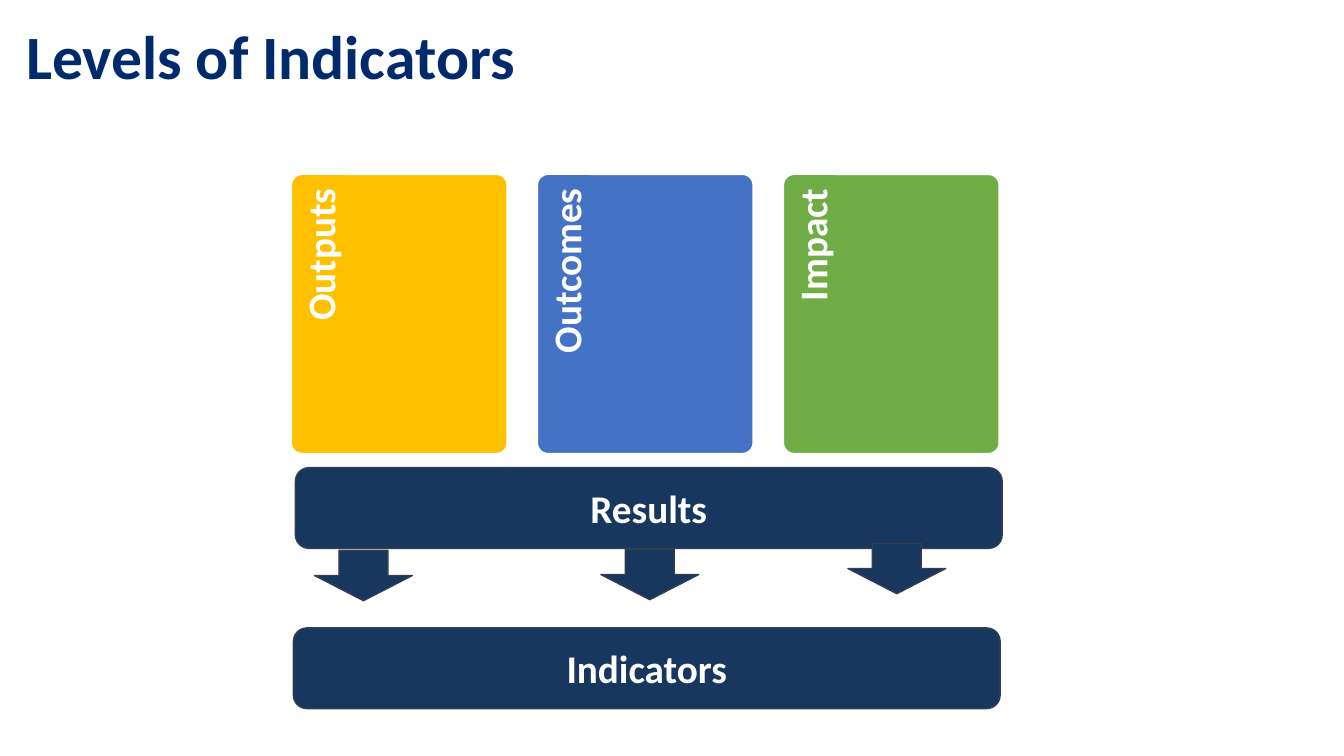
from dataclasses import dataclass

from pptx import Presentation
from pptx.dml.color import RGBColor
from pptx.enum.shapes import MSO_SHAPE
from pptx.enum.text import MSO_ANCHOR, PP_ALIGN
from pptx.util import Pt

ROUNDED = MSO_SHAPE.ROUNDED_RECTANGLE
DOWN_ARROW = MSO_SHAPE.DOWN_ARROW
TOP = MSO_ANCHOR.TOP
MIDDLE = MSO_ANCHOR.MIDDLE
LEFT = PP_ALIGN.LEFT
CENTER = PP_ALIGN.CENTER
RIGHT = PP_ALIGN.RIGHT

EMU_PER_PX = 9144
SLIDE_WIDTH, SLIDE_HEIGHT = 1333, 750


@dataclass(frozen=True)
class Theme:
    font: str = "Calibri"
    title_size: int = 44
    label_size: int = 28
    title: str = "002A6C"
    white: str = "FFFFFF"
    bar: str = "17375E"
    bar_line: str = "333F50"
    outputs: str = "FFC000"
    outcomes: str = "4472C4"
    impact: str = "70AD47"


THEME = Theme()


def px(length):
    return length * EMU_PER_PX


def color(value):
    return RGBColor.from_string(value)


def add_box(slide, kind, box, fill, line):
    shape = slide.shapes.add_shape(kind, *map(px, box))
    shape.shadow.inherit = False
    shape.fill.solid()
    shape.fill.fore_color.rgb = color(fill)
    shape.line.color.rgb = color(line)
    shape.line.width = Pt(1)
    return shape


def write(shape, text, size, text_color, alignment, anchor, spacing=1.0):
    frame = shape.text_frame
    frame.word_wrap = True
    frame.vertical_anchor = anchor
    frame.text = text
    paragraph = frame.paragraphs[0]
    paragraph.alignment = alignment
    paragraph.line_spacing = spacing
    font = paragraph.runs[0].font
    font.name = THEME.font
    font.size = Pt(size)
    font.bold = True
    font.color.rgb = color(text_color)


def add_title(slide, box, text):
    title = slide.shapes.add_textbox(*map(px, box))
    write(title, text, THEME.title_size, THEME.title, LEFT, MIDDLE, 0.9)


def add_level_card(slide, box, text, fill):
    left, top, width, height = box
    card = add_box(slide, ROUNDED, box, fill, THEME.white)
    card.adjustments[0] = 0.05
    label_box = (left - 92, top + 92, 227, 43)
    label = slide.shapes.add_textbox(*map(px, label_box))
    label.rotation = 270
    write(label, text, THEME.label_size, THEME.white, RIGHT, TOP, 0.9)
    frame = label.text_frame
    frame.margin_left = frame.margin_bottom = 0
    frame.margin_top = px(10)
    frame.margin_right = px(14)


def add_levels(slide, box):
    left, top, width, height = box
    levels = (
        ("Outputs", THEME.outputs),
        ("Outcomes", THEME.outcomes),
        ("Impact", THEME.impact),
    )
    card_width = 214
    step = (width - card_width) // (len(levels) - 1)
    for index, (text, fill) in enumerate(levels):
        card_box = (left + index * step, top, card_width, height)
        add_level_card(slide, card_box, text, fill)


def add_bar(slide, box, text):
    bar = add_box(slide, ROUNDED, box, THEME.bar, THEME.bar_line)
    write(bar, text, THEME.label_size, THEME.white, CENTER, MIDDLE)


def add_results_flow(slide, box):
    left, top, width, height = box
    bar_height = 80
    add_bar(slide, (left + 2, top, width, bar_height), "Results")
    add_bar(slide, (left, top + height - bar_height, width, bar_height), "Indicators")
    for arrow_left, arrow_top in ((21, 82), (305, 81), (550, 75)):
        arrow_box = (left + arrow_left, top + arrow_top, 97, 50)
        add_box(slide, DOWN_ARROW, arrow_box, THEME.bar, THEME.bar_line)


def main():
    presentation = Presentation()
    presentation.slide_width = px(SLIDE_WIDTH)
    presentation.slide_height = px(SLIDE_HEIGHT)
    slide = presentation.slides.add_slide(presentation.slide_layouts[6])
    add_title(slide, (16, 0, 1299, 118), "Levels of Indicators")
    add_levels(slide, (289, 173, 702, 277))
    add_results_flow(slide, (291, 464, 701, 239))
    presentation.save("out.pptx")


if __name__ == "__main__":
    main()
